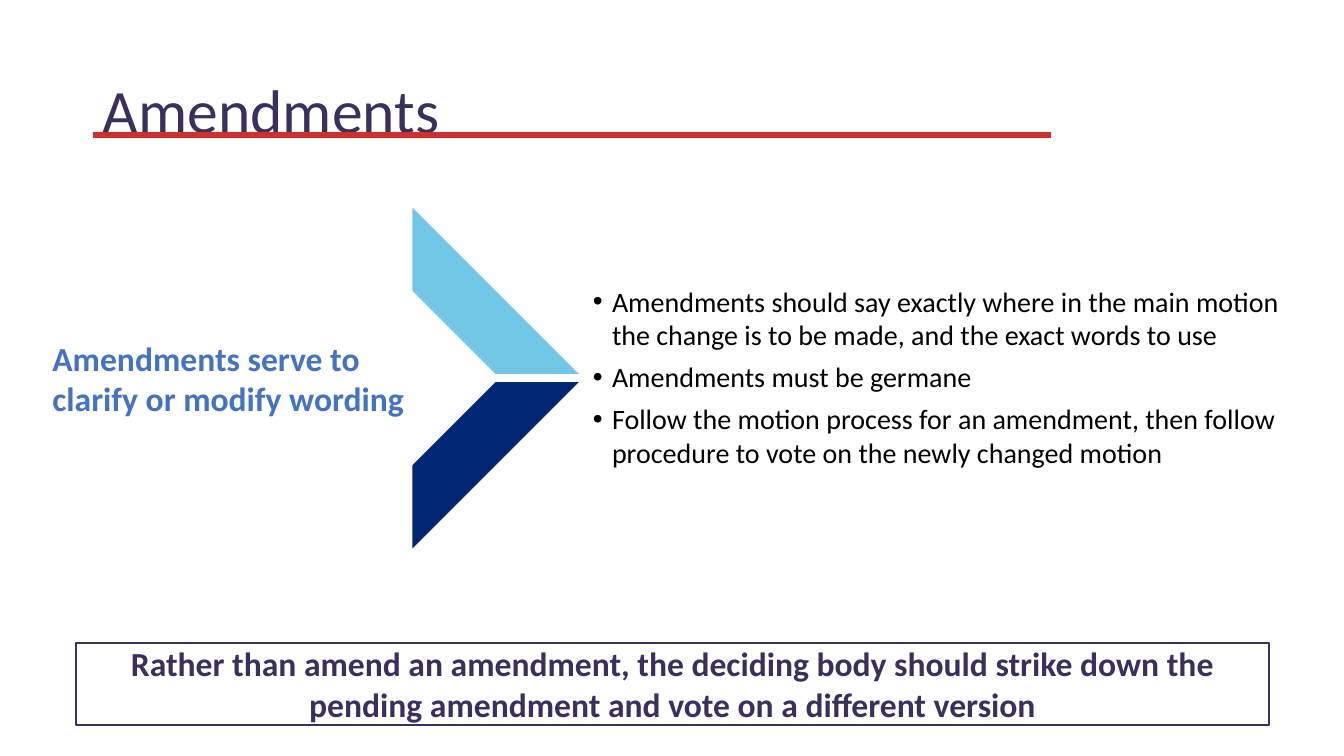
import pptx
import pptx.util
import pptx.dml.color
import pptx.enum.shapes
import pptx.enum.text
import pptx.oxml
import pptx.oxml.ns

Inches = pptx.util.Inches
Pt = pptx.util.Pt
RGBColor = pptx.dml.color.RGBColor
Shape = pptx.enum.shapes.MSO_SHAPE
Align = pptx.enum.text.PP_ALIGN
Anchor = pptx.enum.text.MSO_ANCHOR
Fit = pptx.enum.text.MSO_AUTO_SIZE

PURPLE = RGBColor(0x3B, 0x2F, 0x5F)
NAVY = RGBColor(0x00, 0x27, 0x76)
SKY = RGBColor(0x72, 0xC7, 0xE7)
BLUE = RGBColor(0x44, 0x72, 0xC4)
RED = RGBColor(0xD0, 0x30, 0x2C)
BLACK = RGBColor(0, 0, 0)

POINTS = [
    "Amendments should say exactly where in the main motion the change is to be made, "
    "and the exact words to use",
    "Amendments must be germane",
    "Follow the motion process for an amendment, then follow procedure to vote on the "
    "newly changed motion",
]


def place(shape, left, top, width, height):
    shape.left, shape.top = Inches(left), Inches(top)
    shape.width, shape.height = Inches(width), Inches(height)


def bullet(para, indent):
    props = para._p.get_or_add_pPr()
    props.set("marL", str(Inches(indent)))
    props.set("indent", str(-Inches(indent)))
    mark = pptx.oxml.parse_xml(
        '<a:buChar %s char="•"/>' % pptx.oxml.ns.nsdecls("a"))
    props.append(mark)


def write(shape, lines, size, color, bold=False, align=Align.LEFT,
          anchor=Anchor.TOP, inset=0, after=6, spacing=1, bullets=False):
    frame = shape.text_frame
    frame.word_wrap = True
    frame.auto_size = Fit.NONE
    frame.vertical_anchor = anchor
    frame.margin_left = frame.margin_right = Inches(inset)
    frame.margin_top = frame.margin_bottom = Inches(inset / 2)
    frame.text = "\n".join(lines)
    for para in frame.paragraphs:
        para.alignment = align
        para.line_spacing = spacing
        para.space_before, para.space_after = Pt(0), Pt(after)
        if bullets:
            bullet(para, 0.19)
        font = para.runs[0].font
        font.name, font.size, font.bold = "Calibri", Pt(size), bold
        font.color.rgb = color


def stripe(slide, top, color, flip=False):
    """Add one arm of the chevron."""
    arm = slide.shapes.add_shape(Shape.DIAGONAL_STRIPE, Inches(4.09), Inches(top),
                                 Inches(1.65), Inches(1.65))
    arm.shadow.inherit = False
    arm.fill.solid()
    arm.fill.fore_color.rgb = color
    arm.line.fill.background()
    if flip:
        arm._element.spPr.xfrm.set("flipV", "1")


def frame_box(slide, left, top, width, height):
    """Add an unfilled rectangle with a purple outline."""
    box = slide.shapes.add_shape(Shape.RECTANGLE, Inches(left), Inches(top),
                                 Inches(width), Inches(height))
    box.shadow.inherit = False
    box.fill.background()
    box.line.color.rgb = PURPLE
    box.line.width = Pt(1.5)
    return box


def rule(slide, left, right, top):
    line = slide.shapes.add_connector(pptx.enum.shapes.MSO_CONNECTOR.STRAIGHT,
                                      Inches(left), Inches(top), Inches(right), Inches(top))
    line.line.color.rgb = RED
    line.line.width = Pt(4)
    effects = pptx.oxml.parse_xml("<a:effectLst %s/>" % pptx.oxml.ns.nsdecls("a"))
    line._element.spPr.append(effects)


def main():
    deck = pptx.Presentation()
    deck.slide_width, deck.slide_height = Inches(13.33), Inches(7.5)
    slide = deck.slides.add_slide(deck.slide_layouts[1])

    title = slide.shapes.title
    place(title, 0.92, 0.4, 11.5, 1.45)
    write(title, ["Amendments"], 44, PURPLE, anchor=Anchor.MIDDLE,
          inset=0.1, after=0, spacing=0.9)

    stripe(slide, 3.79, NAVY)
    stripe(slide, 2.06, SKY, flip=True)

    body = slide.placeholders[1]
    place(body, 5.88, 2.82, 6.93, 1.85)
    write(body, POINTS, 20, BLACK, bullets=True)

    purpose = slide.shapes.add_textbox(Inches(0.52), Inches(3.35), Inches(3.57), Inches(0.81))
    write(purpose, ["Amendments serve to clarify or modify wording"], 24, BLUE, bold=True)

    advice = frame_box(slide, 0.75, 6.38, 11.84, 0.81)
    write(advice, ["Rather than amend an amendment, the deciding body should strike down the "
                   "pending amendment and vote on a different version"],
          24, PURPLE, bold=True, align=Align.CENTER)

    rule(slide, 0.92, 10.42, 1.34)
    deck.save("out.pptx")


if __name__ == "__main__":
    main()
